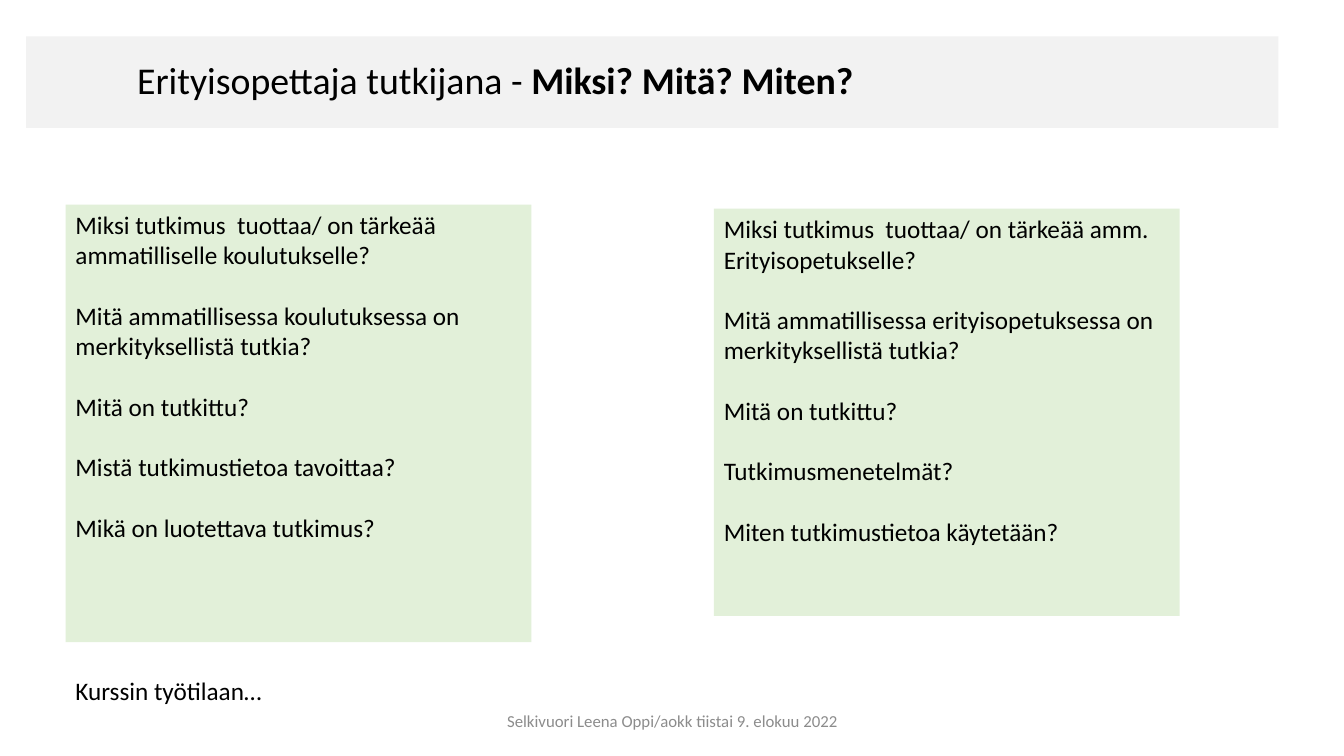
from pptx import Presentation
from pptx.dml.color import RGBColor
from pptx.enum.shapes import MSO_SHAPE
from pptx.enum.text import MSO_ANCHOR, MSO_AUTO_SIZE, PP_ALIGN
from pptx.util import Inches, Pt

FONT = "Calibri"
BLACK, GREY = "000000", "8C8C8C"
BAND_GREY, BOX_GREEN = "F2F2F2", "E2F0D9"

EDUCATION_QUESTIONS = [
    "Miksi tutkimus  tuottaa/ on tärkeää ammatilliselle koulutukselle?",
    "Mitä ammatillisessa koulutuksessa on merkityksellistä tutkia?",
    "Mitä on tutkittu?",
    "Mistä tutkimustietoa tavoittaa?",
    "Mikä on luotettava tutkimus?",
]
SPECIAL_NEEDS_QUESTIONS = [
    "Miksi tutkimus  tuottaa/ on tärkeää amm. Erityisopetukselle?",
    "Mitä ammatillisessa erityisopetuksessa on merkityksellistä tutkia?",
    "Mitä on tutkittu?",
    "Tutkimusmenetelmät?",
    "Miten tutkimustietoa käytetään?",
]


def set_fill(shape, color):
    shape.fill.solid()
    shape.fill.fore_color.rgb = RGBColor.from_string(color)


def format_paragraph(paragraph, size, color=BLACK, align=PP_ALIGN.LEFT):
    paragraph.alignment = align
    paragraph.font.name = FONT
    paragraph.font.size = Pt(size)
    paragraph.font.color.rgb = RGBColor.from_string(color)


def add_title(slide, plain, bold):
    title = slide.shapes.title
    title.left, title.top = Inches(0.26), Inches(0.36)
    title.width, title.height = Inches(12.42), Inches(0.91)
    set_fill(title, BAND_GREY)
    frame = title.text_frame
    frame.auto_size = MSO_AUTO_SIZE.NONE
    frame.vertical_anchor = MSO_ANCHOR.MIDDLE
    frame.margin_left = Inches(1.1)
    paragraph = frame.paragraphs[0]
    paragraph.line_spacing = 0.9
    format_paragraph(paragraph, 27)
    paragraph.add_run().text = plain
    emphasis = paragraph.add_run()
    emphasis.text = bold
    emphasis.font.bold = True


def add_question_box(slide, left, top, height, questions):
    box = slide.shapes.add_shape(
        MSO_SHAPE.RECTANGLE, Inches(left), Inches(top), Inches(4.62), Inches(height))
    box.shadow.inherit = False
    box.line.fill.background()
    set_fill(box, BOX_GREEN)
    frame = box.text_frame
    frame.word_wrap = True
    frame.vertical_anchor = MSO_ANCHOR.TOP
    frame.text = "\n".join(questions)
    for paragraph in frame.paragraphs:
        format_paragraph(paragraph, 18)
        paragraph.space_after = Pt(21.6)  # one line between questions


def add_label(slide, left, top, width, text, size, color, align):
    label = slide.shapes.add_textbox(
        Inches(left), Inches(top), Inches(width), Inches(0.4))
    frame = label.text_frame
    frame.word_wrap = True
    frame.vertical_anchor = MSO_ANCHOR.MIDDLE
    frame.text = text
    format_paragraph(frame.paragraphs[0], size, color, align)


def main():
    presentation = Presentation()
    presentation.slide_width = Inches(13.33)
    presentation.slide_height = Inches(7.5)
    title_only = presentation.slide_layouts.get_by_name("Title Only")
    slide = presentation.slides.add_slide(title_only)

    # Title band
    add_title(slide, "Erityisopettaja tutkijana - ", "Miksi? Mitä? Miten?")

    # Question boxes
    add_question_box(slide, 0.65, 2.03, 4.34, EDUCATION_QUESTIONS)
    add_question_box(slide, 7.08, 2.07, 4.04, SPECIAL_NEEDS_QUESTIONS)

    # Closing note and footer
    add_label(slide, 0.65, 6.65, 3.76, "Kurssin työtilaan…", 18, BLACK, PP_ALIGN.LEFT)
    add_label(slide, 4.42, 6.95, 4.5, "Selkivuori Leena Oppi/aokk tiistai 9. elokuu 2022",
              12, GREY, PP_ALIGN.CENTER)

    presentation.save("out.pptx")


if __name__ == "__main__":
    main()
